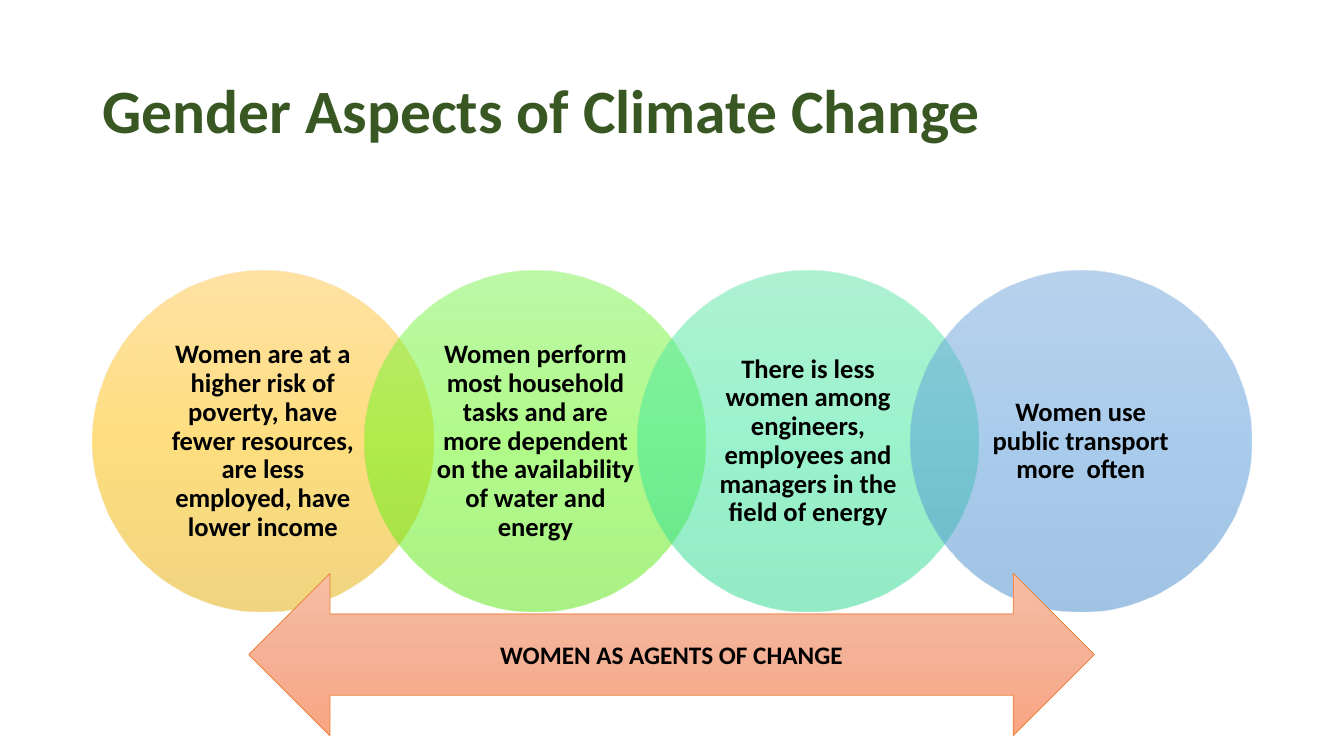
"""Build the slide on gender aspects of climate change."""
from lxml import etree
from pptx import Presentation
from pptx.dml.color import RGBColor
from pptx.enum.shapes import MSO_SHAPE
from pptx.enum.text import MSO_ANCHOR, PP_ALIGN
from pptx.oxml.ns import qn
from pptx.util import Cm, Pt

OVAL = MSO_SHAPE.OVAL
DOUBLE_ARROW = MSO_SHAPE.LEFT_RIGHT_ARROW
MIDDLE = MSO_ANCHOR.MIDDLE
LEFT, CENTER = PP_ALIGN.LEFT, PP_ALIGN.CENTER

FONT = "Calibri"
BLACK = RGBColor(0x00, 0x00, 0x00)
DARK_GREEN = RGBColor(0x38, 0x57, 0x23)
ORANGE = RGBColor(0xED, 0x7D, 0x31)
AMBERS = RGBColor(0xFF, 0xC6, 0x4B), RGBColor(0xFF, 0xC0, 0x00), RGBColor(0xE3, 0xAB, 0x00)
LIMES = RGBColor(0x7A, 0xF3, 0x50), RGBColor(0x63, 0xF9, 0x16), RGBColor(0x56, 0xE5, 0x0C)
MINTS = RGBColor(0x5E, 0xE6, 0xA6), RGBColor(0x37, 0xE9, 0x9C), RGBColor(0x27, 0xD8, 0x8C)
BLUES = RGBColor(0x71, 0xA6, 0xDB), RGBColor(0x55, 0x9B, 0xDB), RGBColor(0x44, 0x8A, 0xCA)
PEACHES = RGBColor(0xF7, 0xBD, 0xA5), RGBColor(0xF5, 0xB1, 0x96), RGBColor(0xF8, 0xA5, 0x82)

ASPECTS = [
    ("Women are at a higher risk of poverty, have fewer resources, "
     "are less employed, have lower income", AMBERS),
    ("Women perform most household tasks and are more dependent "
     "on the availability of water and energy", LIMES),
    ("There is less women among engineers, employees and managers "
     "in the field of energy", MINTS),
    ("Women use public transport more  often", BLUES),
]
CIRCLE_LEFT, CIRCLE_TOP = 2.33, 6.83
CIRCLE_SIZE, CIRCLE_STEP = 8.59, 6.87


def write_text(shape, text, size, color, align, line_spacing):
    """Fill a shape with one bold, vertically centred paragraph."""
    frame = shape.text_frame
    frame.word_wrap = True
    frame.vertical_anchor = MIDDLE
    frame.text = text
    paragraph = frame.paragraphs[0]
    paragraph.alignment = align
    paragraph.line_spacing = line_spacing
    font = paragraph.runs[0].font
    font.name, font.size, font.bold = FONT, Pt(size), True
    font.color.rgb = color


def fill_downwards(shape, colors, opacity):
    """Give a shape an evenly spaced gradient from top to bottom."""
    shape.fill.gradient()
    shape.fill.gradient_angle = 270
    stops = shape.fill._fill._gradFill.find(qn("a:gsLst"))
    for stop in list(stops):
        stops.remove(stop)
    for index, color in enumerate(colors):
        position = 100000 * index // (len(colors) - 1)
        stop = etree.SubElement(stops, qn("a:gs"), pos=str(position))
        shade = etree.SubElement(stop, qn("a:srgbClr"), val=str(color))
        if opacity < 100:
            etree.SubElement(shade, qn("a:alpha"), val=str(opacity * 1000))


def add_title(slide, text):
    """Add the slide title."""
    title = slide.shapes.add_textbox(Cm(2.33), Cm(1.01), Cm(29.21), Cm(3.68))
    write_text(title, text, 44, DARK_GREEN, LEFT, 0.9)


def add_aspect(slide, index, text, colors):
    """Add one translucent circle of the overlapping row."""
    circle = slide.shapes.add_shape(
        OVAL, Cm(CIRCLE_LEFT + index * CIRCLE_STEP), Cm(CIRCLE_TOP),
        Cm(CIRCLE_SIZE), Cm(CIRCLE_SIZE))
    circle.shadow.inherit = False
    fill_downwards(circle, colors, 50)
    circle.line.fill.background()
    frame = circle.text_frame
    frame.margin_left = frame.margin_right = Cm(0.48)
    frame.margin_top = frame.margin_bottom = Cm(0.07)
    write_text(circle, text, 19, BLACK, CENTER, 0.9)


def add_agents_arrow(slide, text):
    """Add the double arrow below the circles."""
    arrow = slide.shapes.add_shape(
        DOUBLE_ARROW, Cm(6.27), Cm(14.45), Cm(21.31), Cm(4.09))
    arrow.shadow.inherit = False
    fill_downwards(arrow, PEACHES, 100)
    arrow.line.color.rgb = ORANGE
    arrow.line.width = Pt(0.5)
    write_text(arrow, text, 18, BLACK, CENTER, 1.0)


def main():
    """Create and save the presentation."""
    deck = Presentation()
    deck.slide_width, deck.slide_height = Cm(33.87), Cm(19.05)
    slide = deck.slides.add_slide(deck.slide_layouts[6])
    add_title(slide, "Gender Aspects of Climate Change")
    for index, (text, colors) in enumerate(ASPECTS):
        add_aspect(slide, index, text, colors)
    add_agents_arrow(slide, "WOMEN AS AGENTS OF CHANGE")
    deck.save("out.pptx")


if __name__ == "__main__":
    main()
